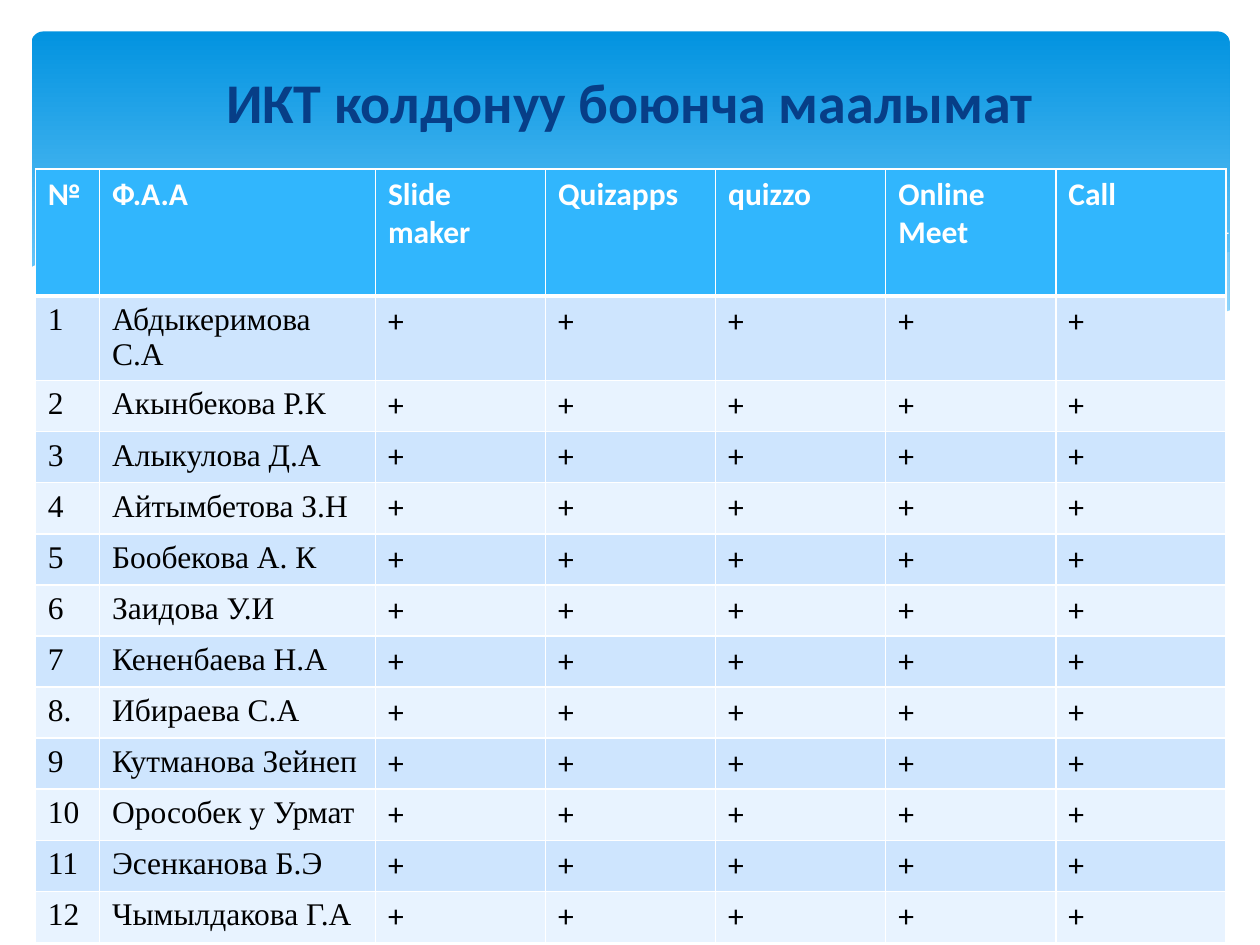
"""Build a slide with a table of the ICT tools used by each teacher."""
from lxml import etree
from pptx import Presentation, util as u
from pptx.dml.color import RGBColor
from pptx.enum import shapes, text
from pptx.oxml.ns import qn


def colour(value):
    return RGBColor.from_string(value)


def write(frame, words, font="Calibri", size=18, ink="000000", bold=False, align=text.PP_ALIGN.LEFT):
    paragraph = frame.paragraphs[0]
    paragraph.alignment = align
    run = paragraph.add_run()
    run.text = words
    run.font.name = font
    run.font.size = u.Pt(size)
    run.font.bold = bold
    run.font.color.rgb = colour(ink)


deck = Presentation()
deck.slide_width, deck.slide_height = u.Inches(10), u.Inches(7.5)
slide = deck.slides.add_slide(deck.slide_layouts[6])

banner = slide.shapes.add_shape(
    shapes.MSO_SHAPE.ROUNDED_RECTANGLE, u.Inches(0.25), u.Inches(0.25), u.Inches(9.51), u.Inches(2.7))
banner.adjustments[0] = 0.034
banner.shadow.inherit = False
banner.line.fill.background()
banner.fill.gradient()
banner.fill.gradient_angle = 270
for stop, position, shade in zip(banner.fill.gradient_stops, (0, 0.9), ("0293E0", "83D3FE")):
    stop.position = position
    stop.color.rgb = colour(shade)

# fmt: off
right_swell = [
    (9.76, 2), (9.48, 2.04), (9.06, 2.13), (8.61, 2.23), (8.05, 2.37), (7.53, 2.48), (7.06, 2.57),
    (6.61, 2.65), (6.91, 2.69), (7.32, 2.74), (7.69, 2.77), (8.14, 2.78), (8.54, 2.76), (8.89, 2.72),
    (9.21, 2.65), (9.49, 2.57), (9.76, 2.47)]
middle_swell = [
    (8.93, 2.73), (8.37, 2.65), (7.75, 2.54), (7.06, 2.4), (6.29, 2.22), (5.84, 2.11), (5.41, 2.03),
    (4.89, 1.94), (4.42, 1.89), (3.99, 1.86), (3.61, 1.85), (3.28, 1.87), (2.86, 1.91), (3.23, 1.96),
    (3.62, 2.03), (4.04, 2.11), (4.49, 2.22), (5.3, 2.4), (6.01, 2.55), (6.5, 2.64), (7.09, 2.72),
    (7.61, 2.77), (8.07, 2.78), (8.48, 2.77)]
long_crest = [
    (3.09, 1.95), (3.44, 1.9), (3.87, 1.87), (4.33, 1.87), (4.89, 1.9), (5.33, 1.94), (5.82, 2),
    (6.36, 2.08), (6.95, 2.19), (7.6, 2.33), (8.31, 2.51), (9.07, 2.72)]
right_crest = [
    (6.13, 2.57), (6.72, 2.41), (7.2, 2.29), (7.76, 2.16), (8.36, 2.04), (8.81, 1.96), (9.24, 1.9),
    (9.75, 1.85)]
white_wave = [
    (9.77, 2.46), (9.5, 2.56), (9.2, 2.65), (8.87, 2.71), (8.5, 2.75), (8.09, 2.77), (7.61, 2.75),
    (7.08, 2.7), (6.48, 2.62), (5.79, 2.5), (5.03, 2.33), (4.47, 2.2), (3.91, 2.07), (3.4, 1.97),
    (2.92, 1.9), (2.5, 1.86), (2.11, 1.84), (1.77, 1.84), (1.46, 1.85), (1.19, 1.87), (0.95, 1.91),
    (0.67, 1.97), (0.46, 2.03), (0.29, 2.1), (0.23, 2.13), (0.23, 3.29), (9.77, 3.29)]
# fmt: on
for outline, shade, opacity in (
    (right_swell, "C6E7FC", 29), (middle_swell, "C6E7FC", 40),
    (long_crest, None, 100), (right_crest, None, 100), (white_wave, "FFFFFF", 100),
):
    points = [(u.Inches(x), u.Inches(y)) for x, y in outline]
    builder = slide.shapes.build_freeform(*points[0])
    builder.add_line_segments(points[1:], close=shade is not None)
    wave = builder.convert_to_shape()
    wave.shadow.inherit = False
    if shade is None:
        wave.fill.background()
        wave.line.color.rgb = colour("FFFFFF")
        wave.line.width = u.Pt(0)
        continue
    wave.line.fill.background()
    wave.fill.solid()
    wave.fill.fore_color.rgb = colour(shade)
    if opacity < 100:
        tint = next(wave.element.spPr.iter(qn("a:srgbClr")))
        etree.SubElement(tint, qn("a:alpha"), val=str(opacity * 1000))

tools = ["Slide maker", "Quizapps", "quizzo", "Online Meet", "Call"]
teachers = [
    "Абдыкеримова С.А", "Акынбекова Р.К", "Алыкулова Д.А", "Айтымбетова З.Н", "Бообекова А. К",
    "Заидова У.И", "Кененбаева Н.А", "Ибираева С.А", "Кутманова Зейнеп", "Орособек у Урмат",
    "Эсенканова Б.Э", "Чымылдакова Г.А"]
rows = [["№", "Ф.А.А"] + tools]
for number, teacher in enumerate(teachers, 1):
    rows.append(["8." if number == 8 else str(number), teacher] + ["+"] * len(tools))
widths = [0.51, 2.19] + [1.35] * len(tools)
heights = [1.01, 0.67] + [0.4] * (len(teachers) - 1)

table = slide.shapes.add_table(
    len(rows), len(widths), u.Inches(0.28), u.Inches(1.34),
    u.Inches(sum(widths)), u.Inches(sum(heights))).table
for column, width in zip(table.columns, widths):
    column.width = u.Inches(width)
for row, height in zip(table.rows, heights):
    row.height = u.Inches(height)

for r, entries in enumerate(rows):
    for c, entry in enumerate(entries):
        cell = table.cell(r, c)
        properties = cell._tc.get_or_add_tcPr()
        for side in ("lnL", "lnR", "lnT", "lnB"):
            thick = (r == 0 and side == "lnB") or (r == 1 and side == "lnT")
            border = etree.SubElement(properties, qn(f"a:{side}"), w=str(u.Pt(3 if thick else 1)))
            paint = etree.SubElement(border, qn("a:solidFill"))
            etree.SubElement(paint, qn("a:srgbClr"), val="FFFFFF")
        cell.fill.solid()
        cell.fill.fore_color.rgb = colour("31B6FD" if r == 0 else "CEE5FE" if r % 2 else "E8F3FF")
        if r == 0:
            write(cell.text_frame, entry, ink="FFFFFF", bold=True)
        else:
            write(cell.text_frame, entry, font="Times New Roman" if c < 2 else "Calibri")

title = slide.shapes.add_textbox(u.Inches(0.5), u.Inches(0.37), u.Inches(9), u.Inches(0.86)).text_frame
title.word_wrap = True
title.vertical_anchor = text.MSO_ANCHOR.MIDDLE
write(title, "ИКТ колдонуу боюнча маалымат", size=32, ink="073E87", bold=True, align=text.PP_ALIGN.CENTER)

deck.save("out.pptx")
